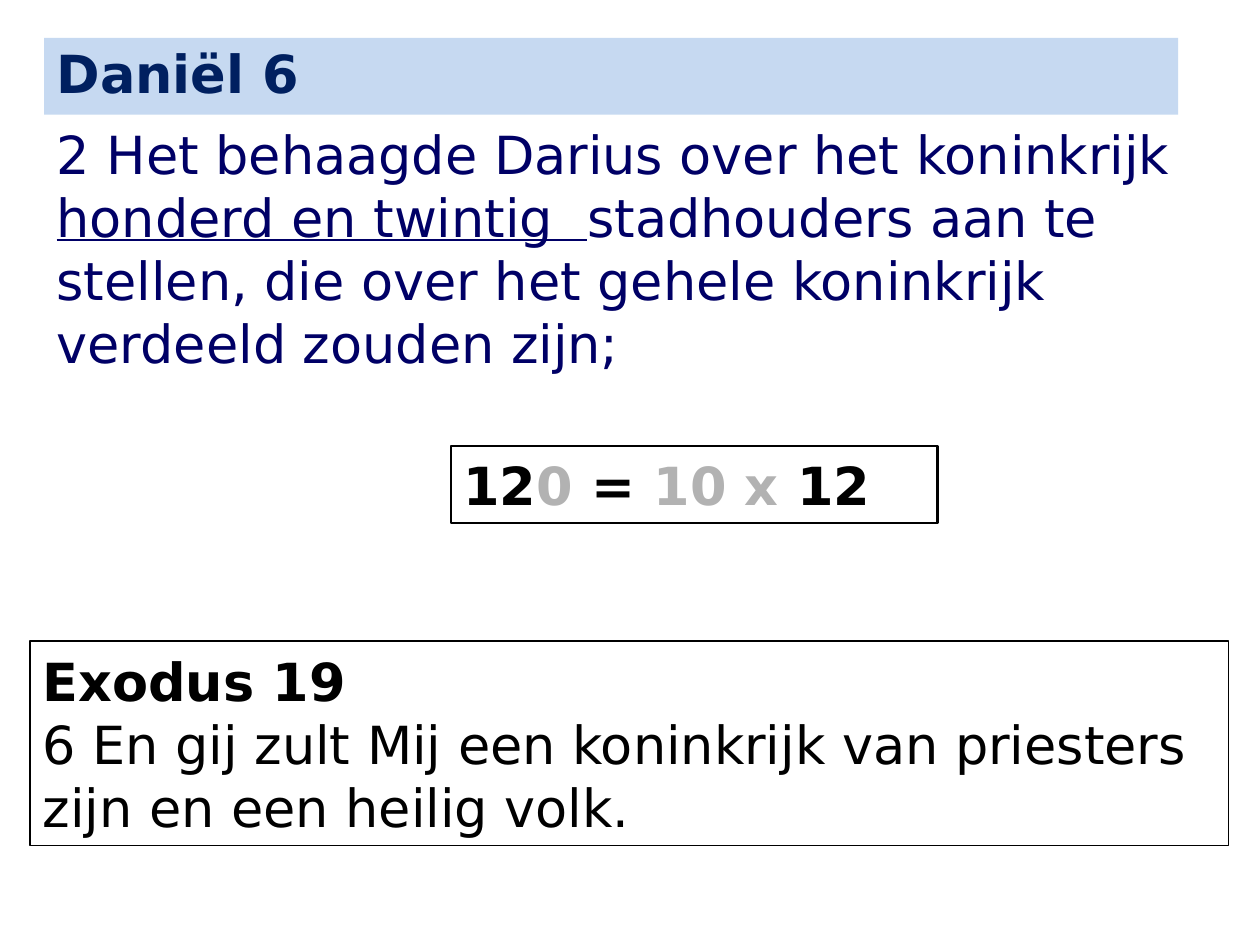
from dataclasses import dataclass

from lxml.etree import SubElement
from pptx import Presentation
from pptx.dml.color import RGBColor
from pptx.enum.shapes import MSO_SHAPE
from pptx.enum.text import MSO_ANCHOR, MSO_AUTO_SIZE, PP_ALIGN
from pptx.oxml.ns import qn
from pptx.util import Inches, Pt


@dataclass(frozen=True)
class Theme:
    font: str = "DejaVu Sans"
    size: float = 30
    heading: str = "002060"
    heading_fill: str = "C6D9F1"
    verse: str = "000066"
    ink: str = "000000"
    muted: str = "B2B2B2"


THEME = Theme()


def color(value):
    return RGBColor.from_string(value)


def place(shape, left, top, width, height):
    shape.left, shape.top = Inches(left), Inches(top)
    shape.width, shape.height = Inches(width), Inches(height)


def style_frame(frame, anchor, auto_size=MSO_AUTO_SIZE.NONE):
    frame.word_wrap = True
    frame.vertical_anchor = anchor
    frame.auto_size = auto_size


def style_para(para, ink, bold=False):
    para.alignment = PP_ALIGN.LEFT
    para.font.name = THEME.font
    para.font.size = Pt(THEME.size)
    para.font.bold = bold
    para.font.color.rgb = color(ink)


def add_span(para, text):
    span = para.add_run()
    span.text = text
    return span


def fill_title(page, text):
    title = page.shapes.title
    place(title, 0.35, 0.3, 9, 0.61)
    title.fill.solid()
    title.fill.fore_color.rgb = color(THEME.heading_fill)
    style_frame(title.text_frame, MSO_ANCHOR.MIDDLE)
    para = title.text_frame.paragraphs[0]
    para.text = text
    para.line_spacing = 0.9
    style_para(para, THEME.heading, bold=True)


def fill_verse(page, before, underlined, after):
    body = page.placeholders[1]
    place(body, 0.35, 0.92, 9.3, 2.28)
    style_frame(body.text_frame, MSO_ANCHOR.TOP)
    para = body.text_frame.paragraphs[0]
    style_para(para, THEME.verse)
    properties = para._p.get_or_add_pPr()
    properties.set("marL", "0")
    properties.set("indent", "0")
    SubElement(properties, qn("a:buNone"))
    properties.append(properties.find(qn("a:defRPr")))
    add_span(para, before)
    add_span(para, underlined).font.underline = True
    add_span(para, after)


def add_outlined_box(page, left, top, width, height, line_width):
    box = page.shapes.add_shape(
        MSO_SHAPE.RECTANGLE, Inches(left), Inches(top), Inches(width), Inches(height)
    )
    box.shadow.inherit = False
    box.fill.background()
    box.line.color.rgb = color(THEME.ink)
    box.line.width = Pt(line_width)
    style_frame(box.text_frame, MSO_ANCHOR.MIDDLE, MSO_AUTO_SIZE.SHAPE_TO_FIT_TEXT)
    return box


def add_quotation(page, source, text):
    frame = add_outlined_box(page, 0.24, 5.09, 9.51, 1.62, 1).text_frame
    heading = frame.paragraphs[0]
    heading.text = source
    style_para(heading, THEME.ink, bold=True)
    para = frame.add_paragraph()
    para.text = text
    style_para(para, THEME.ink)


def add_equation(page, parts):
    box = add_outlined_box(page, 3.58, 3.54, 3.86, 0.61, 1.5)
    para = box.text_frame.paragraphs[0]
    style_para(para, THEME.ink, bold=True)
    for text, ink in parts:
        add_span(para, text).font.color.rgb = color(ink)


def main():
    deck = Presentation()
    deck.slide_width, deck.slide_height = Inches(10), Inches(7.5)
    page = deck.slides.add_slide(deck.slide_layouts[1])
    fill_title(page, "Daniël 6")
    fill_verse(
        page,
        "2 Het behaagde Darius over het koninkrijk ",
        "honderd en twintig  ",
        "stadhouders aan te stellen, die over het gehele koninkrijk verdeeld zouden zijn;",
    )
    add_quotation(
        page,
        "Exodus 19",
        "6 En gij zult Mij een koninkrijk van priesters zijn en een heilig volk.",
    )
    add_equation(
        page,
        [
            ("12", THEME.ink),
            ("0", THEME.muted),
            (" = ", THEME.ink),
            ("10 x ", THEME.muted),
            ("12", THEME.ink),
        ],
    )
    deck.save("out.pptx")


if __name__ == "__main__":
    main()
